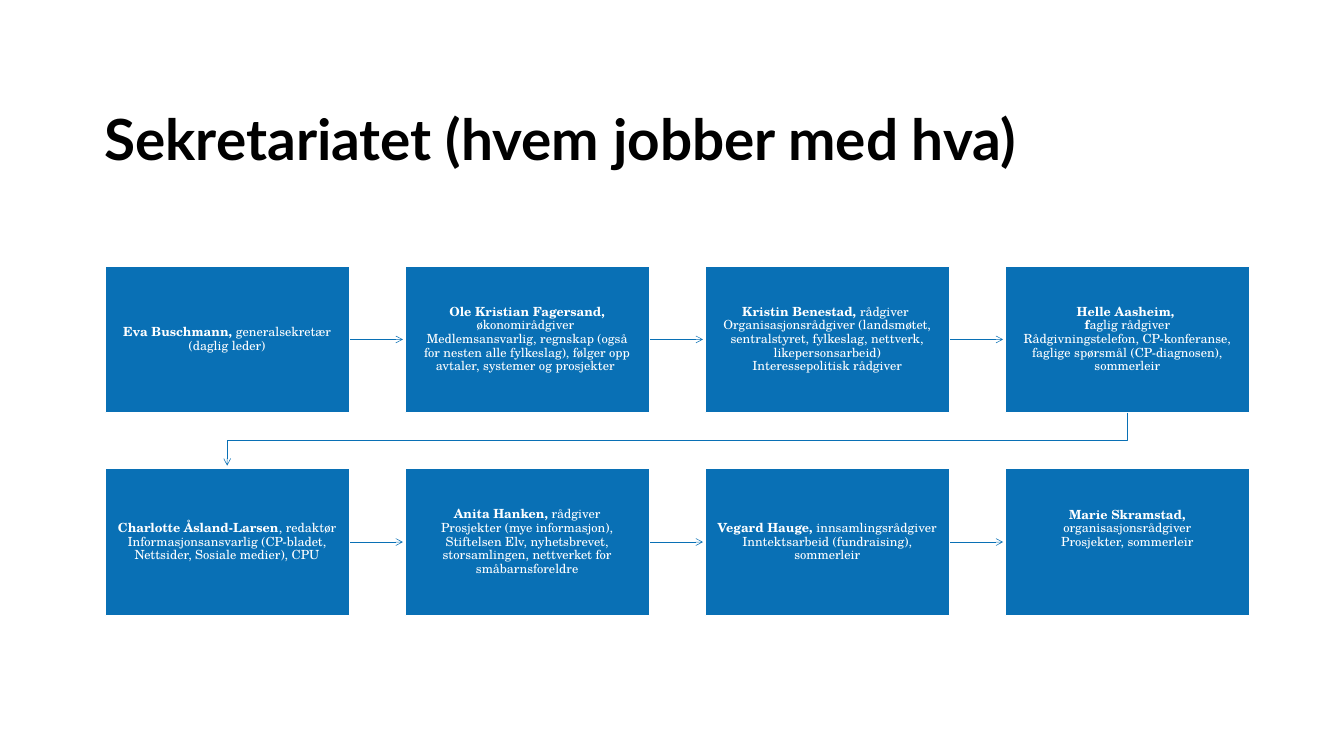
import pptx
import pptx.dml.color
import pptx.enum.shapes
import pptx.enum.text
import pptx.oxml
import pptx.oxml.ns
import pptx.util
from pptx.util import Inches

RGB = pptx.dml.color.RGBColor.from_string
ANCHOR = pptx.enum.text.MSO_ANCHOR
ALIGN = pptx.enum.text.PP_ALIGN

THEME = {
    "blue": RGB("0970B5"),
    "white": RGB("FFFFFF"),
    "title": {"name": "Lato", "size": pptx.util.Pt(54), "bold": True},
    "title_color": RGB("000000"),
    "body": {"name": "TeX Gyre Schola", "size": pptx.util.Pt(12)},
    "border": pptx.util.Pt(1),
    "arrow": pptx.util.Pt(0.5),
}

# Each person: bold text, then regular text
STAFF = [
    ("Eva Buschmann, ", "generalsekretær (daglig leder)"),
    ("Ole Kristian Fagersand, ",
     "økonomirådgiver \nMedlemsansvarlig, regnskap (også for nesten alle fylkeslag), "
     "følger opp avtaler, systemer og prosjekter "),
    ("Kristin Benestad, ",
     "rådgiver \nOrganisasjonsrådgiver (landsmøtet, sentralstyret, fylkeslag, nettverk, "
     "likepersonsarbeid)\nInteressepolitisk rådgiver"),
    ("Helle Aasheim, \nf",
     "aglig rådgiver\nRådgivningstelefon, CP-konferanse, faglige spørsmål "
     "(CP-diagnosen), sommerleir"),
    ("Charlotte Åsland-Larsen",
     ", redaktør\nInformasjonsansvarlig (CP-bladet, Nettsider, Sosiale medier), CPU"),
    ("Anita Hanken, ",
     "rådgiver\nProsjekter (mye informasjon), Stiftelsen Elv, nyhetsbrevet, "
     "storsamlingen, nettverket for småbarnsforeldre"),
    ("Vegard Hauge, ",
     "innsamlingsrådgiver\nInntektsarbeid (fundraising), sommerleir"),
    ("Marie Skramstad, ", "organisasjonsrådgiver\nProsjekter, sommerleir"),
]

COLS = 4
LEFT, TOP = 1.39, 3.52
BOX_W, BOX_H = 3.23, 1.94
STEP_X, STEP_Y = 3.97, 2.68
ARROW_LEN = 0.71


def style_arrow(sp):
    sp.line.color.rgb = THEME["blue"]
    sp.line.width = THEME["arrow"]
    ns = pptx.oxml.ns.nsdecls("a")
    sp.line._get_or_add_ln().append(
        pptx.oxml.parse_xml(f'<a:tailEnd {ns} type="arrow"/>'))
    sp._element.spPr.append(pptx.oxml.parse_xml(f"<a:effectLst {ns}/>"))


def add_text(p, text, bold):
    """Add text to a paragraph, with a line break at each newline."""
    for n, line in enumerate(text.split("\n")):
        if n:
            p.add_line_break()
        r = p.add_run()
        r.text = line
        for key, value in THEME["body"].items():
            setattr(r.font, key, value)
        r.font.bold = bold
        r.font.color.rgb = THEME["white"]


prs = pptx.Presentation()
prs.slide_width, prs.slide_height = Inches(17.78), Inches(10)
s = prs.slides.add_slide(prs.slide_layouts[5])

# Title
title = s.shapes.title
title.left, title.top = Inches(1.38), Inches(0.32)
title.width, title.height = Inches(15.16), Inches(1.97)
tf = title.text_frame
tf.text = "Sekretariatet (hvem jobber med hva)"
frame = {"margin_left": 0, "margin_right": 0, "margin_top": 0, "margin_bottom": 0,
         "vertical_anchor": ANCHOR.BOTTOM, "word_wrap": True,
         "auto_size": pptx.enum.text.MSO_AUTO_SIZE.NONE}
for key, value in frame.items():
    setattr(tf, key, value)
p = tf.paragraphs[0]
p.alignment = ALIGN.LEFT
p.line_spacing = 0.9
for key, value in THEME["title"].items():
    setattr(p.runs[0].font, key, value)
p.runs[0].font.color.rgb = THEME["title_color"]

# Staff boxes, with an arrow to the next box in the row
frame = {"margin_left": Inches(0.16), "margin_right": Inches(0.16),
         "margin_top": Inches(0.17), "margin_bottom": Inches(0.17),
         "vertical_anchor": ANCHOR.MIDDLE, "word_wrap": True}
for i, (name, role) in enumerate(STAFF):
    row, col = divmod(i, COLS)
    x, y = LEFT + col * STEP_X, TOP + row * STEP_Y
    if col < COLS - 1:
        start, mid = x + BOX_W, y + BOX_H / 2
        arrow = s.shapes.add_connector(
            pptx.enum.shapes.MSO_CONNECTOR.STRAIGHT,
            Inches(start), Inches(mid), Inches(start + ARROW_LEN), Inches(mid))
        style_arrow(arrow)

    sp = s.shapes.add_shape(pptx.enum.shapes.MSO_SHAPE.RECTANGLE,
                            Inches(x), Inches(y), Inches(BOX_W), Inches(BOX_H))
    sp.shadow.inherit = False
    sp.fill.solid()
    sp.fill.fore_color.rgb = THEME["blue"]
    sp.line.color.rgb = THEME["white"]
    sp.line.width = THEME["border"]
    tf = sp.text_frame
    for key, value in frame.items():
        setattr(tf, key, value)
    p = tf.paragraphs[0]
    p.alignment = ALIGN.CENTER
    p.line_spacing = 0.9
    add_text(p, name, True)
    add_text(p, role, False)

# The last box has its text a little above the middle
tf.margin_bottom = Inches(0.52)

# Elbow arrow from the end of the first row to the start of the second
first_x = LEFT + BOX_W / 2
last_x = first_x + (COLS - 1) * STEP_X
turn_y = 5.83
builder = s.shapes.build_freeform(Inches(last_x), Inches(TOP + BOX_H))
builder.add_line_segments(
    [(Inches(last_x), Inches(turn_y)), (Inches(first_x), Inches(turn_y)),
     (Inches(first_x), Inches(6.16))], close=False)
elbow = builder.convert_to_shape()
elbow.fill.background()
style_arrow(elbow)

prs.save("out.pptx")
